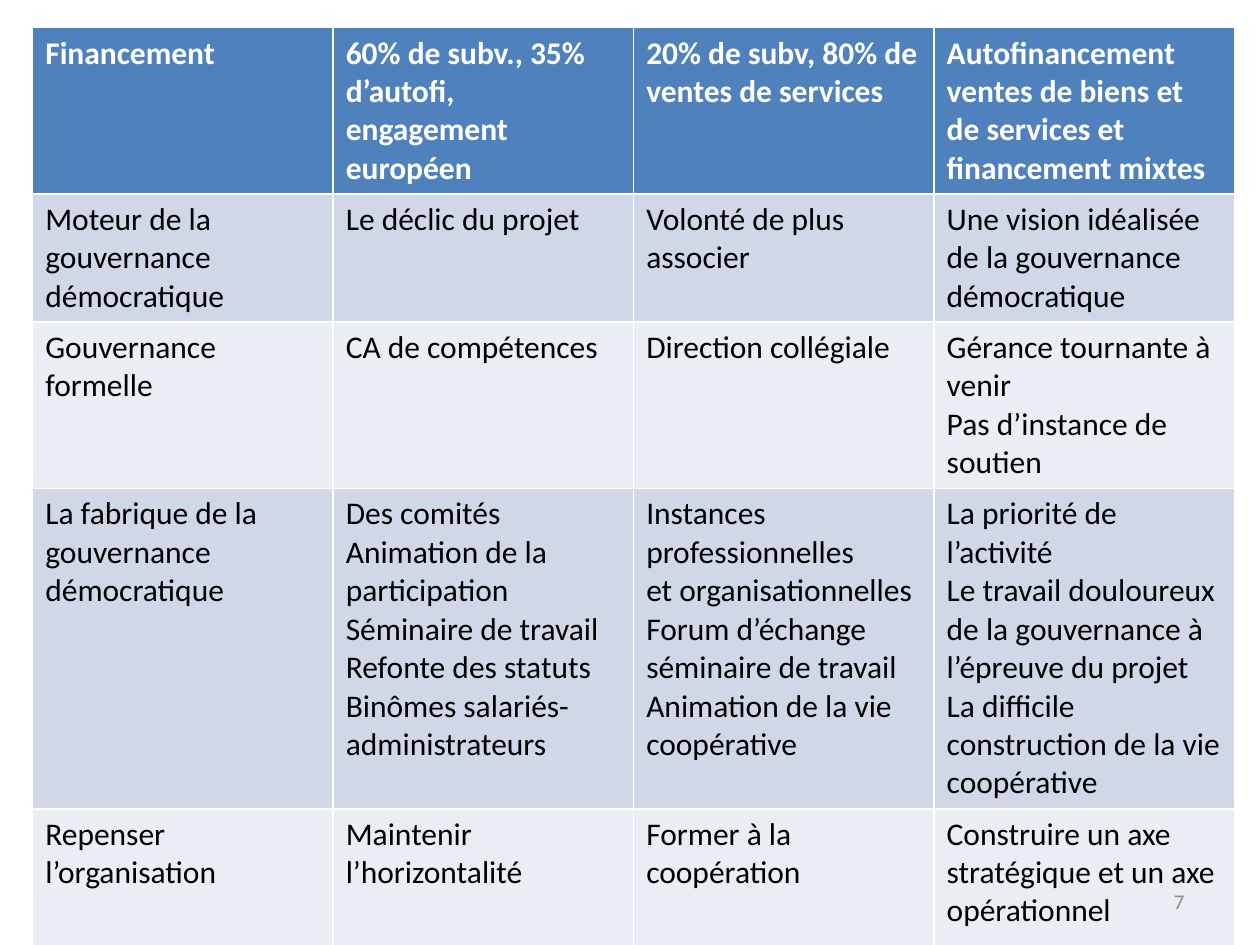
from dataclasses import dataclass

from pptx import Presentation
from pptx.dml.color import RGBColor
from pptx.enum.text import MSO_ANCHOR, PP_ALIGN
from pptx.util import Inches, Pt

SLIDE_WIDTH, SLIDE_HEIGHT = 10, 7.5
TABLE_LEFT, TABLE_TOP, TABLE_WIDTH = 0.26, 0.22, 9.54
FONT_NAME = "Calibri"
HEADER_FILL = "4F81BD"
BAND_FILLS = ("E9EDF4", "D0D8E8")


@dataclass(frozen=True)
class TableRow:
    height: float
    cells: tuple[str, ...]


ROWS = (
    TableRow(1.29, (
        "Financement",
        "60% de subv., 35% d’autofi, engagement européen",
        "20% de subv, 80% de ventes de services",
        "Autofinancement ventes de biens et de services et financement mixtes",
    )),
    TableRow(0.92, (
        "Moteur de la gouvernance démocratique",
        "Le déclic du projet",
        "Volonté de plus associer",
        "Une vision idéalisée de la gouvernance démocratique",
    )),
    TableRow(1.17, (
        "Gouvernance formelle",
        "CA de compétences",
        "Direction collégiale",
        "Gérance tournante à venir\nPas d’instance de soutien",
    )),
    TableRow(2.48, (
        "La fabrique de la gouvernance démocratique",
        "Des comités\nAnimation de la participation\nSéminaire de travail\n"
        "Refonte des statuts\nBinômes salariés-administrateurs",
        "Instances professionnelles\net organisationnelles\n"
        "Forum d’échange séminaire de travail\nAnimation de la vie coopérative",
        "La priorité de l’activité\n"
        "Le travail douloureux de la gouvernance à l’épreuve du projet\n"
        "La difficile construction de la vie coopérative",
    )),
    TableRow(1.11, (
        "Repenser l’organisation",
        "Maintenir l’horizontalité",
        "Former à la coopération",
        "Construire un axe stratégique et un axe opérationnel",
    )),
)


def color(value: str) -> RGBColor:
    return RGBColor.from_string(value)


def write_text(frame, text: str, size: float, ink: str, bold: bool = False) -> None:
    frame.text = text
    for paragraph in frame.paragraphs:
        font = paragraph.font
        font.name, font.size, font.bold = FONT_NAME, Pt(size), bold
        font.color.rgb = color(ink)


def draw_table(page, rows: tuple[TableRow, ...]) -> None:
    column_count = len(rows[0].cells)
    table = page.shapes.add_table(
        len(rows), column_count, Inches(TABLE_LEFT), Inches(TABLE_TOP),
        Inches(TABLE_WIDTH), Inches(sum(row.height for row in rows)),
    ).table
    for column in table.columns:
        column.width = Inches(TABLE_WIDTH / column_count)
    for row_index, row in enumerate(rows):
        is_header = row_index == 0
        table.rows[row_index].height = Inches(row.height)
        for column_index, text in enumerate(row.cells):
            cell = table.cell(row_index, column_index)
            cell.fill.solid()
            cell.fill.fore_color.rgb = color(
                HEADER_FILL if is_header else BAND_FILLS[row_index % 2]
            )
            write_text(cell.text_frame, text, 18,
                       "FFFFFF" if is_header else "000000", is_header)


def draw_page_number(page, number: str) -> None:
    box = page.shapes.add_textbox(Inches(7.17), Inches(6.95), Inches(2.33), Inches(0.4))
    frame = box.text_frame
    frame.word_wrap = True
    frame.vertical_anchor = MSO_ANCHOR.MIDDLE
    write_text(frame, number, 12, "8C8C8C")
    frame.paragraphs[0].alignment = PP_ALIGN.RIGHT


def main() -> None:
    deck = Presentation()
    deck.slide_width, deck.slide_height = Inches(SLIDE_WIDTH), Inches(SLIDE_HEIGHT)
    page = deck.slides.add_slide(deck.slide_layouts[6])
    draw_table(page, ROWS)
    draw_page_number(page, "7")
    deck.save("out.pptx")


if __name__ == "__main__":
    main()
